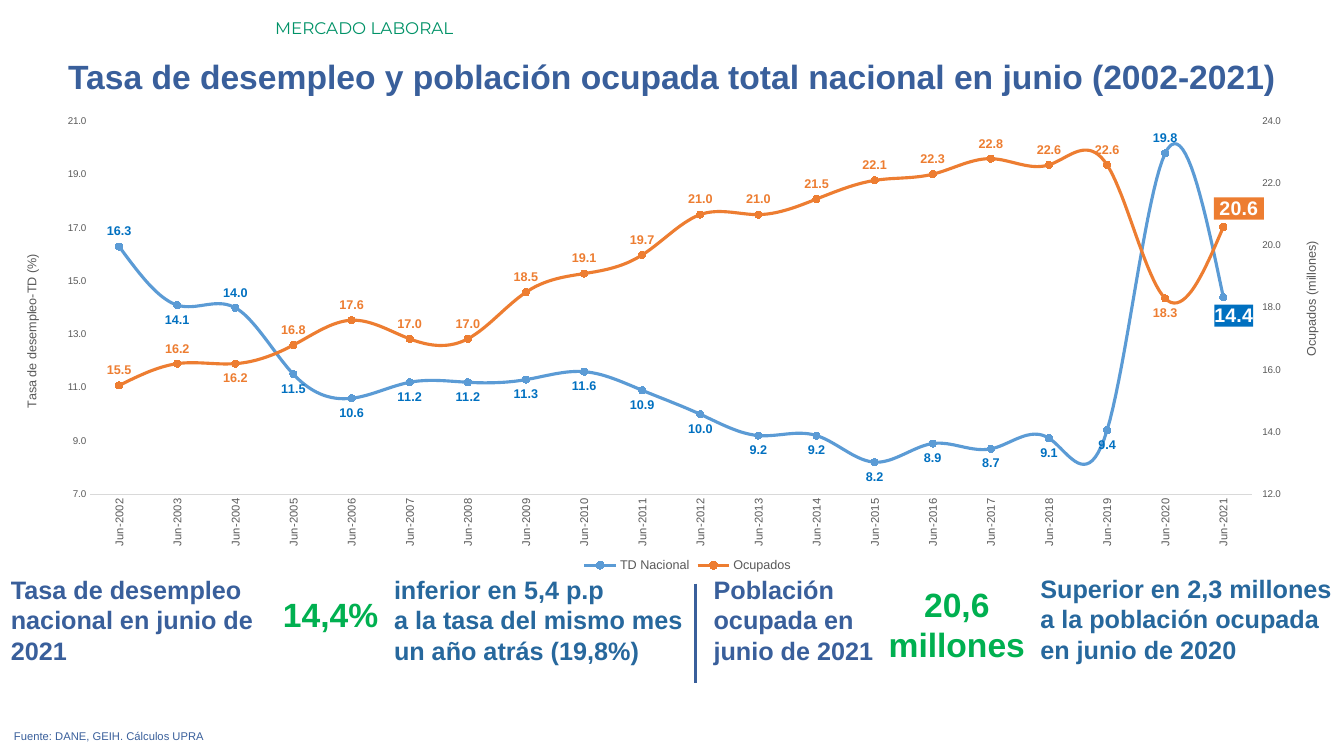
from copy import deepcopy
from lxml import etree
from pptx import Presentation
from pptx.chart.axis import CategoryAxis, ValueAxis
from pptx.chart.data import CategoryChartData
from pptx.dml.color import RGBColor
from pptx.enum.chart import (XL_CHART_TYPE, XL_LABEL_POSITION, XL_LEGEND_POSITION,
                             XL_MARKER_STYLE, XL_TICK_MARK)
from pptx.enum.shapes import MSO_CONNECTOR
from pptx.enum.text import MSO_ANCHOR, PP_ALIGN
from pptx.oxml import parse_xml
from pptx.oxml.ns import nsdecls, qn
from pptx.util import Inches, Pt

# Content
COLORS = {"navy": "395F9B", "steel": "27689D", "green": "00B050", "section": "009267",
          "grey": "595959", "axis": "D9D9D9", "white": "FFFFFF", "td": "5B9BD5",
          "td_label": "0070C0", "employed": "ED7D31"}
TITLE = "Tasa de desempleo y población ocupada total nacional en junio (2002-2021)"
LEFT, CENTER, RIGHT = PP_ALIGN.LEFT, PP_ALIGN.CENTER, PP_ALIGN.RIGHT

# text, box (left, top, width, height), size, color, bold, alignment, font
TEXTS = [
    ("MERCADO LABORAL", (2.63, 0.13, 10.7, 0.3), 12, "section", False, LEFT, "Montserrat"),
    ("Tasa de desempleo nacional en junio de 2021", (0.01, 5.65, 2.84, 1.01),
     18, "navy", True, LEFT, "Arial"),
    ("14,4%", (2.63, 5.84, 1.22, 0.5), 24, "green", True, RIGHT, "Arial"),
    ("inferior en 5,4 p.p\na la tasa del mismo mes un año atrás (19,8%)",
     (3.81, 5.65, 3.07, 1.01), 18, "steel", True, LEFT, "Arial"),
    ("Población ocupada en junio de 2021", (6.98, 5.65, 1.83, 1.01),
     18, "navy", True, LEFT, "Arial"),
    ("20,6 millones", (8.69, 5.74, 1.6, 0.91), 24, "green", True, CENTER, "Arial"),
    ("Superior en 2,3 millones a la población ocupada en junio de 2020",
     (10.22, 5.64, 3.22, 1.01), 18, "steel", True, LEFT, "Arial"),
    ("Fuente: DANE, GEIH. Cálculos UPRA", (0.04, 7.19, 12.91, 0.24),
     8, "navy", False, PP_ALIGN.JUSTIFY, "Arial"),
]
YEARS = range(2002, 2022)
ABOVE, BELOW = XL_LABEL_POSITION.ABOVE, XL_LABEL_POSITION.BELOW
# "moved" labels sit opposite to the usual side; the last label is highlighted
SERIES = [
    {"name": "TD Nacional", "color": "td", "label": "td_label", "side": BELOW,
     "moved": {0: ABOVE, 2: ABOVE, 18: ABOVE}, "last_shift": 0.008,
     "format": "#,##0.0", "axis": "Tasa de desempleo-TD (%)", "range": (7, 21),
     "ticks": XL_TICK_MARK.NONE,
     "values": (16.3, 14.1, 14, 11.5, 10.6, 11.2, 11.2, 11.3, 11.6, 10.9,
                10, 9.2, 9.2, 8.2, 8.9, 8.7, 9.1, 9.4, 19.8, 14.4)},
    {"name": "Ocupados", "color": "employed", "label": "employed", "side": ABOVE,
     "moved": {2: BELOW, 18: BELOW}, "last_shift": 0.012,
     "format": "_-* #,##0.0_-;\\-* #,##0.0_-;_-* \"-\"??_-",
     "axis": "Ocupados (millones)", "range": (12, 24), "ticks": XL_TICK_MARK.OUTSIDE,
     "values": (15.5, 16.2, 16.2, 16.8, 17.6, 17, 17, 18.5, 19.1, 19.7,
                21, 21, 21.5, 22.1, 22.3, 22.8, 22.6, 22.6, 18.3, 20.6)},
]
# Places inside the chart, as fractions of its size
PLOT_BOX = {"x": 0.053, "y": 0.031, "w": 0.894, "h": 0.792}
LEGEND_PLACE = {"x": 0.43, "y": 0.95}
RIGHT_TITLE_PLACE = {"x": 0.984, "y": 0.28}
EDGES = '<c:xMode val="edge"/><c:yMode val="edge"/>'


def rgb(name):
    return RGBColor.from_string(COLORS[name])


def style(font, size, color, bold=False, name="Arial"):
    font.size, font.bold, font.name = Pt(size), bold, name
    font.color.rgb = rgb(color)


def write(tf, text, size, color, bold, align, name):
    tf.word_wrap = True
    tf.text = text
    for p in tf.paragraphs:
        p.alignment = align
        for r in p.runs:
            style(r.font, size, color, bold, name)


def drop(parent, *tags):
    for tag in tags:
        for node in parent.findall(qn(tag)):
            parent.remove(node)


def manual_layout(values, modes=""):
    parts = "".join(f'<c:{k} val="{v}"/>' for k, v in values.items())
    return parse_xml(f'<c:layout {nsdecls("c")}><c:manualLayout>{modes}{parts}'
                     '</c:manualLayout></c:layout>')


def place_after(parent, tag, values):
    drop(parent, "c:layout")
    parent.find(qn(tag)).addnext(manual_layout(values, EDGES))


def format_value_axis(axis, info):
    axis.minimum_scale, axis.maximum_scale = info["range"]
    axis.major_unit = 2
    axis.has_major_gridlines = False
    axis.major_tick_mark, axis.minor_tick_mark = info["ticks"], XL_TICK_MARK.NONE
    axis.format.line.fill.background()
    style(axis.tick_labels.font, 7, "grey")
    axis.tick_labels.number_format = "0.0"
    axis.tick_labels.number_format_is_linked = False
    tf = axis.axis_title.text_frame
    tf.text = info["axis"]
    style(tf.paragraphs[0].runs[0].font, 9, "grey")
    body = tf._txBody.find(qn("a:bodyPr"))
    body.set("rot", "-5400000")
    body.set("vert", "horz")


def format_point_label(ser, i, info, side, size, color, fill=None, shift=0):
    label = ser.points[i].data_label
    style(label.font, size, color, True)
    label.position = side
    idx = ser._element.xpath(f'c:dLbls/c:dLbl/c:idx[@val="{i}"]')[0]
    drop(idx.getparent(), "c:layout", "c:numFmt", "c:spPr")
    if fill:
        idx.addnext(parse_xml(f'<c:spPr {nsdecls("c", "a")}><a:solidFill><a:srgbClr '
                              f'val="{COLORS[fill]}"/></a:solidFill>'
                              '<a:ln><a:noFill/></a:ln></c:spPr>'))
    num = parse_xml(f'<c:numFmt {nsdecls("c")} formatCode="" sourceLinked="0"/>')
    num.set("formatCode", info["format"])
    idx.addnext(num)
    if shift:
        idx.addnext(manual_layout({"x": shift, "y": 0}))


def format_series(ser, info):
    ser.smooth = True
    ser.format.line.width = Pt(2.25)
    ser.format.line.color.rgb = rgb(info["color"])
    ser.marker.style, ser.marker.size = XL_MARKER_STYLE.CIRCLE, 5
    ser.marker.format.fill.solid()
    ser.marker.format.fill.fore_color.rgb = rgb(info["color"])
    ser.marker.format.line.color.rgb = rgb(info["color"])
    labels = ser.data_labels
    labels.show_value, labels.position = True, info["side"]
    labels.number_format, labels.number_format_is_linked = info["format"], False
    style(labels.font, 9, info["label"], True)
    for i, side in info["moved"].items():
        format_point_label(ser, i, info, side, 9, info["label"])
    format_point_label(ser, len(YEARS) - 1, info, info["side"], 14, "white",
                       info["label"], info["last_shift"])


def add_right_axis(chart):
    """Move the second series to its own line plot with a right-hand axis."""
    left_plot = chart.plots[0]._element
    right_plot = deepcopy(left_plot)
    left_plot.remove(left_plot.findall(qn("c:ser"))[1])
    right_plot.remove(right_plot.findall(qn("c:ser"))[0])
    left_plot.addnext(right_plot)
    cat, val = chart.category_axis._element, chart.value_axis._element
    cat2, val2 = deepcopy(cat), deepcopy(val)
    val.addnext(val2)
    val2.addnext(cat2)
    for node, own, other in ((cat2, "5001", "5002"), (val2, "5002", "5001")):
        node.find(qn("c:axId")).set("val", own)
        node.find(qn("c:crossAx")).set("val", other)
    for node, number in zip(right_plot.findall(qn("c:axId")), ("5001", "5002")):
        node.set("val", number)
    val2.find(qn("c:axPos")).set("val", "r")
    val2.find(qn("c:crosses")).set("val", "max")
    CategoryAxis(cat2).visible = False
    return ValueAxis(val2)


prs = Presentation()
prs.slide_width, prs.slide_height = Inches(13.33), Inches(7.5)
s = prs.slides.add_slide(prs.slide_layouts[5])

# Title
title = s.shapes.title
title.left, title.top, title.width, title.height = map(Inches, (0, 0.5, 13.33, 0.5))
title.text_frame.vertical_anchor = MSO_ANCHOR.TOP
write(title.text_frame, TITLE, 24, "navy", True, CENTER, "Arial")

# Section name, key figures and source
for text, box, *look in TEXTS:
    write(s.shapes.add_textbox(*map(Inches, box)).text_frame, text, *look)

# Divider between the two key figures
divider = s.shapes.add_connector(MSO_CONNECTOR.STRAIGHT, *map(Inches, (6.9, 5.79, 6.9, 6.78)))
divider.line.color.rgb, divider.line.width = rgb("navy"), Pt(2.25)
etree.SubElement(divider._element.spPr, qn("a:effectLst"))

# Chart
data = CategoryChartData(number_format="0.0")
data.categories = [f"Jun-{year}" for year in YEARS]
for info in SERIES:
    data.add_series(info["name"], info["values"])
chart = s.shapes.add_chart(XL_CHART_TYPE.LINE_MARKERS,
                           *map(Inches, (0.21, 1.06, 12.91, 4.67)), data).chart
style(chart.font, 10, "grey")
chart.has_title = False
chart.has_legend = True
chart.legend.position = XL_LEGEND_POSITION.BOTTOM
chart.legend.include_in_layout = False
style(chart.legend.font, 9, "grey")
place_after(chart.legend._element, "c:legendPos", LEGEND_PLACE)

# Axes
cat_axis = chart.category_axis
cat_axis.has_major_gridlines = False
cat_axis.major_tick_mark = XL_TICK_MARK.NONE
cat_axis.format.line.color.rgb, cat_axis.format.line.width = rgb("axis"), Pt(0.75)
style(cat_axis.tick_labels.font, 8, "grey")
cat_axis._element.find(qn("c:txPr")).find(qn("a:bodyPr")).set("rot", "-5400000")
axes = [chart.value_axis, add_right_axis(chart)]

# Each series with its own plot and axis
for plot, axis, info in zip(chart.plots, axes, SERIES):
    plot.vary_by_categories = False
    format_value_axis(axis, info)
    format_series(plot.series[0], info)
place_after(axes[1].axis_title._element, "c:tx", RIGHT_TITLE_PLACE)

# Plot area position
area = chart.plots[0]._element.getparent()
drop(area, "c:layout")
area.insert(0, manual_layout(PLOT_BOX, '<c:layoutTarget val="inner"/>' + EDGES))

prs.save("out.pptx")
